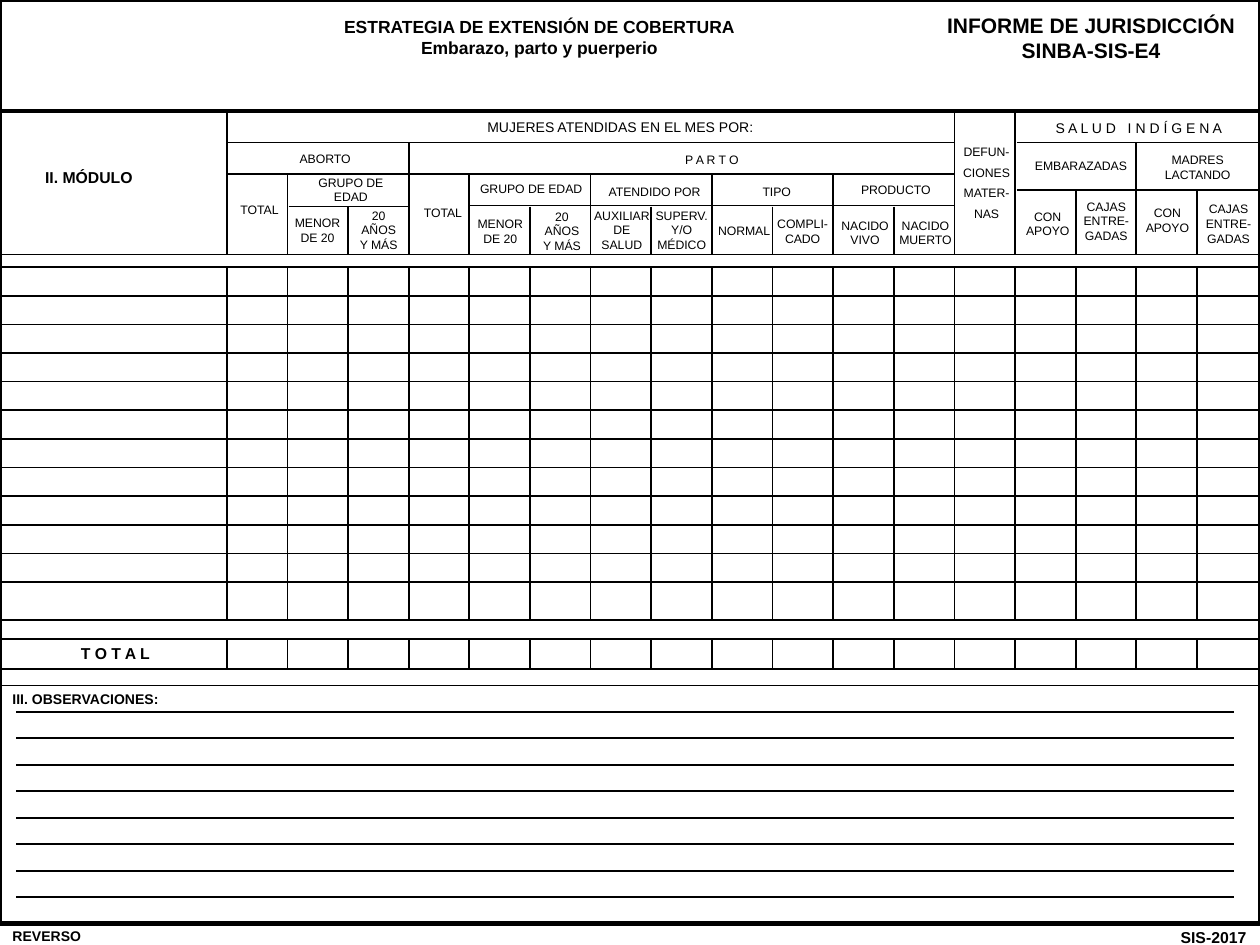
"""Build the SINBA-SIS-E4 form for pregnancy, childbirth and puerperium."""
from lxml import etree
from pptx import Presentation
from pptx.dml.color import RGBColor
from pptx.enum.shapes import MSO_CONNECTOR, MSO_SHAPE
from pptx.enum.text import MSO_ANCHOR, MSO_AUTO_SIZE, PP_ALIGN
from pptx.oxml.ns import qn
from pptx.util import Inches, Pt

STRAIGHT = MSO_CONNECTOR.STRAIGHT
RECTANGLE = MSO_SHAPE.RECTANGLE
TOP = MSO_ANCHOR.TOP
NO_FIT = MSO_AUTO_SIZE.NONE
LEFT, CENTER, RIGHT = PP_ALIGN.LEFT, PP_ALIGN.CENTER, PP_ALIGN.RIGHT
COLORS = {"ink": "000000"}
INK = RGBColor.from_string(COLORS["ink"])
FONT = "Arial"
WORD_GAP = "440"

deck = Presentation()
deck.slide_width, deck.slide_height = Inches(10), Inches(7.5)
page = deck.slides.add_slide(deck.slide_layouts[5])


def add_rule(x1, y1, x2, y2, weight=1):
    rule = page.shapes.add_connector(STRAIGHT, Inches(x1), Inches(y1), Inches(x2), Inches(y2))
    rule.line.color.rgb = INK
    rule.line.width = Pt(weight)
    etree.SubElement(rule._element.spPr, qn("a:effectLst"))


def write_text(box, place, lines, size, bold=False, align=CENTER, spacing=1.0):
    box.left, box.top, box.width, box.height = [Inches(value) for value in place]
    frame = box.text_frame
    frame.word_wrap = True
    frame.auto_size = NO_FIT
    frame.vertical_anchor = TOP
    for index, line in enumerate(lines):
        para = frame.add_paragraph() if index else frame.paragraphs[0]
        para.alignment = align
        para.line_spacing = spacing
        para.space_before = Pt(0)
        for part in line.split("|"):
            span = para.add_run()
            span.text = part
            span.font.name = FONT
            span.font.size = Pt(size)
            span.font.bold = bold
            span.font.color.rgb = INK
            if part == " ":
                span._r.get_or_add_rPr().set("spc", WORD_GAP)


page_frame = page.shapes.add_shape(RECTANGLE, 0, 0, Inches(10), Inches(7.33))
page_frame.shadow.inherit = False
page_frame.fill.background()
page_frame.line.color.rgb = INK
page_frame.line.width = Pt(2.5)

write_text(page.shapes.title, (2.25, 0.08, 4.06, 0.43),
           ["ESTRATEGIA DE EXTENSIÓN DE COBERTURA", "Embarazo, parto y puerperio"], 10, True)

bold_labels = [
    ((7.4, 0.05, 2.52, 0.5), ["INFORME DE JURISDICCIÓN", "SINBA-SIS-E4"], 12, CENTER),
    ((0.04, 1.28, 1.33, 0.25), ["II. MÓDULO"], 9, CENTER),
    ((0.08, 5.06, 1.67, 0.25), ["T O T A L"], 9, CENTER),
    ((0, 5.43, 2.41, 0.23), ["III. OBSERVACIONES:"], 8, LEFT),
    ((0, 7.31, 0.88, 0.23), ["REVERSO"], 8, LEFT),
    ((8.98, 7.31, 1.01, 0.25), ["SIS-2017"], 9, RIGHT),
]
for place, lines, size, align in bold_labels:
    write_text(page.shapes.add_textbox(0, 0, 0, 0), place, lines, size, True, align)

header_labels = [
    (1.85, 0.89, 6.15, 0.23, "MUJERES ATENDIDAS EN EL MES POR:", 8),
    (8.07, 0.9, 1.94, 0.23, "S A L U D| |I N D Í G E N A", 8),
    (2.04, 1.15, 1.08, 0.22, "ABORTO", 7),
    (3.74, 1.16, 3.82, 0.22, "P A R T O", 7),
    (8.11, 1.21, 0.94, 0.22, "EMBARAZADAS", 7),
    (9.12, 1.16, 0.77, 0.33, "MADRES LACTANDO", 7),
    (2.35, 1.34, 0.87, 0.33, "GRUPO DE EDAD", 7),
    (3.69, 1.39, 1.05, 0.22, "GRUPO DE EDAD", 7),
    (4.69, 1.41, 1.01, 0.22, "ATENDIDO POR", 7),
    (5.71, 1.41, 0.91, 0.22, "TIPO", 7),
    (6.71, 1.4, 0.8, 0.22, "PRODUCTO", 7),
    (1.78, 1.56, 0.56, 0.22, "TOTAL", 7),
    (2.22, 1.66, 0.6, 0.33, "MENOR DE 20", 7),
    (2.73, 1.6, 0.55, 0.45, "20 AÑOS Y MÁS", 7),
    (3.24, 1.58, 0.55, 0.22, "TOTAL", 7),
    (3.67, 1.67, 0.6, 0.33, "MENOR DE 20", 7),
    (4.19, 1.61, 0.54, 0.45, "20 AÑOS Y MÁS", 7),
    (4.61, 1.6, 0.65, 0.45, "AUXILIAR DE SALUD", 7),
    (5.1, 1.6, 0.62, 0.45, "SUPERV. Y/O MÉDICO", 7),
    (5.58, 1.72, 0.65, 0.22, "NORMAL", 7),
    (6, 1.67, 0.74, 0.33, "COMPLI-CADO", 7),
    (6.57, 1.68, 0.59, 0.33, "NACIDO VIVO", 7),
    (7.03, 1.68, 0.63, 0.33, "NACIDO MUERTO", 7),
    (8.02, 1.61, 0.59, 0.33, "CON APOYO", 7),
    (8.42, 1.53, 0.72, 0.45, "CAJAS ENTRE-GADAS", 7),
    (8.97, 1.58, 0.59, 0.33, "CON APOYO", 7),
    (9.39, 1.55, 0.72, 0.45, "CAJAS ENTRE-GADAS", 7),
]
for *place, label, size in header_labels:
    write_text(page.shapes.add_textbox(0, 0, 0, 0), place, [label], size)
write_text(page.shapes.add_textbox(0, 0, 0, 0), (7.48, 1.05, 0.7, 0.75),
           ["DEFUN-CIONES MATER-NAS"], 7, spacing=1.4)

add_rule(0, 0.88, 10, 0.88, 2)
header_rules = [(1.81, 7.57, 1.13), (8.07, 10, 1.13), (1.81, 7.57, 1.38),
                (8.07, 10, 1.51), (2.29, 3.25, 1.64), (3.73, 7.57, 1.63)]
for start, end, y in header_rules:
    add_rule(start, y, end, y)

row_ys = [2.12 + row * 2.5 / 11 for row in range(12)]
for y in [2.02, *row_ys, 4.92, 5.07, 5.31, 5.44]:
    add_rule(0, y, 10, y)

divider_tops = [0.88, 1.38, 1.64, 1.13, 1.38, 1.64, 1.38, 1.64, 1.38,
                1.64, 1.38, 1.64, 0.88, 0.88, 1.51, 1.13, 1.51]
for column, header_top in enumerate(divider_tops):
    x = 1.8 + column * 7.7 / 16
    for top, bottom in [(header_top, 2.02), (2.12, 4.92), (5.07, 5.31)]:
        add_rule(x, top, x, bottom)

for row in range(9):
    y = 5.65 + row * 0.21
    add_rule(0.13, y, 9.79, y)

deck.save("out.pptx")
